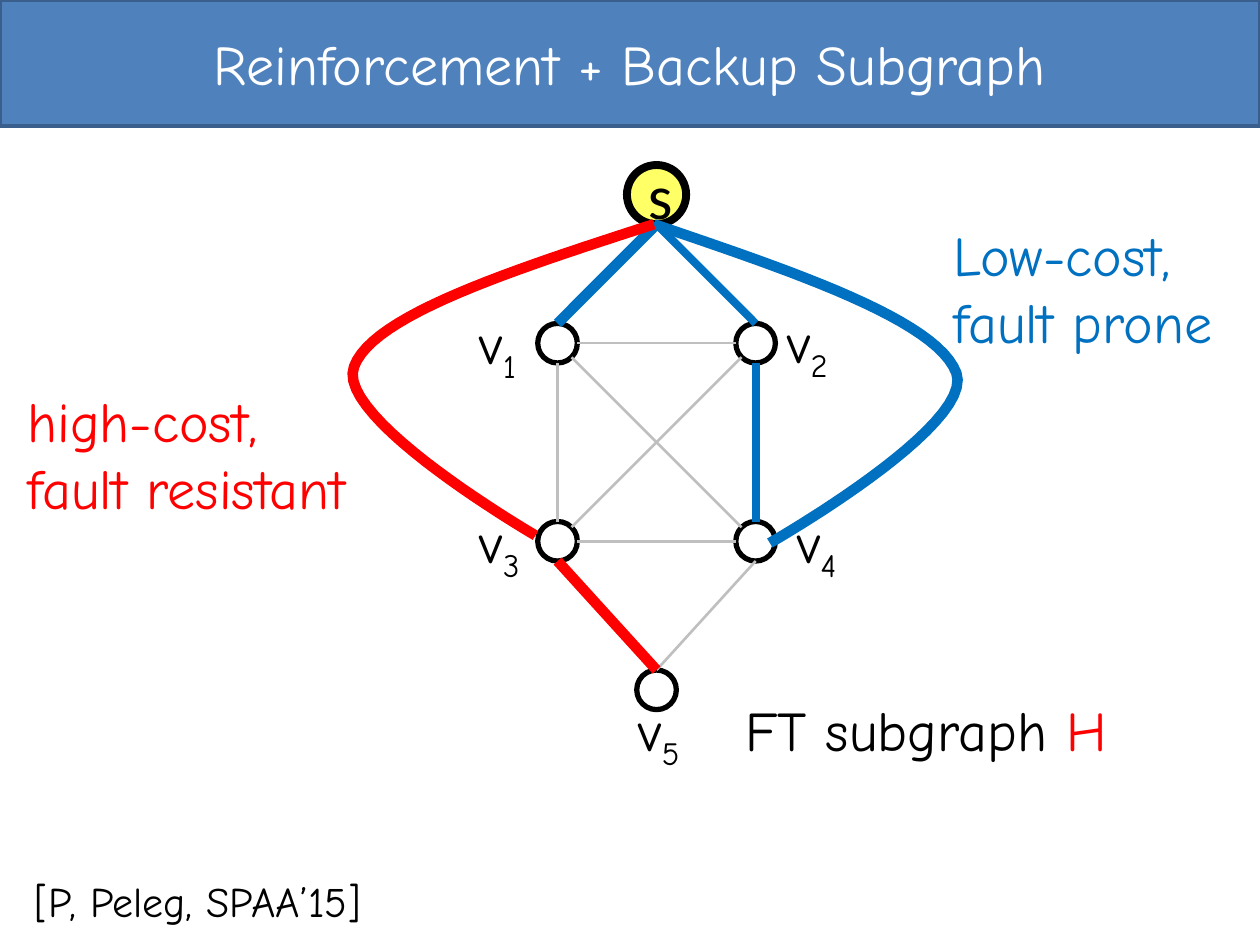
from dataclasses import dataclass

from lxml import etree
from pptx import Presentation
from pptx.dml.color import RGBColor
from pptx.enum.shapes import MSO_CONNECTOR, MSO_SHAPE
from pptx.enum.text import MSO_ANCHOR, MSO_AUTO_SIZE, PP_ALIGN
from pptx.oxml.ns import qn
from pptx.util import Inches, Pt

STRAIGHT = MSO_CONNECTOR.STRAIGHT
OVAL = MSO_SHAPE.OVAL
MIDDLE = MSO_ANCHOR.MIDDLE
CENTER, LEFT = PP_ALIGN.CENTER, PP_ALIGN.LEFT
GROW = MSO_AUTO_SIZE.SHAPE_TO_FIT_TEXT

COLORS = {
    "banner": "4F81BD", "banner_edge": "3A5F8C", "white": "FFFFFF",
    "black": "000000", "source": "FFFF66", "unused": "BFBFBF",
    "backup": "0070C0", "reinforced": "FF0000",
}
FONT = "Comic Neue"

# The slide is a grid of 100 columns by 75 rows; all lengths are in its cells.
COLUMNS, ROWS = 100, 75
CELL = Inches(0.1)
# The graph's nodes stand on a coarser grid.
GRAPH_LEFT, GRAPH_TOP, STEP = 44.25, 15.45, 7.86
DIAGONAL = 0.71
CURVE_STEPS = 24


@dataclass(frozen=True)
class Node:
    column: float
    row: float
    size: float = 3.14
    fill: str = "white"
    weight: float = 3

    @property
    def center(self) -> tuple[float, float]:
        return GRAPH_LEFT + self.column * STEP, GRAPH_TOP + self.row * STEP

    def rim(self, across: float, down: float) -> tuple[float, float]:
        """Point on the outline, (0, -1) being the top and (1, 0) the right."""
        x, y = self.center
        return x + across * self.size / 2, y + down * self.size / 2


@dataclass(frozen=True)
class Edge:
    start: str
    end: str
    leave: tuple[float, float]
    color: str = "unused"
    weight: float = 1.5


@dataclass(frozen=True)
class Span:
    text: str
    color: str = "black"
    subscript: bool = False


@dataclass(frozen=True)
class Label:
    left: float
    top: float
    width: float
    height: float
    lines: list[list[Span]]
    size: float = 32
    align: PP_ALIGN = LEFT


TOP, BOTTOM, SIDE_LEFT = (0, -1), (0, 1), (-1, 0)
UP_LEFT, DOWN_LEFT = (-DIAGONAL, -DIAGONAL), (-DIAGONAL, DIAGONAL)

NODES = {
    "v1": Node(0, 1.5), "v2": Node(2, 1.5),
    "v3": Node(0, 3.5), "v4": Node(2, 3.5), "v5": Node(1, 5),
    "s": Node(1, 0, 4.7, "source", 4.5),
}
# Each edge reaches its end node on the side opposite to the one it leaves by.
UNUSED_EDGES = [
    Edge("v2", "v1", SIDE_LEFT), Edge("v4", "v1", UP_LEFT),
    Edge("v1", "v3", BOTTOM), Edge("v4", "v3", SIDE_LEFT),
    Edge("v2", "v3", DOWN_LEFT), Edge("v4", "v5", BOTTOM),
]
CHOSEN_EDGES = [
    Edge("s", "v1", BOTTOM, "backup", 6), Edge("s", "v2", BOTTOM, "backup", 4.5),
    Edge("v3", "v5", BOTTOM, "reinforced", 6), Edge("v2", "v4", BOTTOM, "backup", 4.5),
]
# Bezier control points: start, then three points for each segment.
CURVES = {
    "backup": [(51.9, 17.8), (63.1, 21.6), (74.3, 25.4), (75.9, 29.6),
               (77.4, 33.8), (61.1, 43.1), (61.1, 43.1)],
    "reinforced": [(51.9, 17.8), (40.8, 21.4), (29.6, 25), (28.1, 29.1),
                   (26.5, 33.2), (42.5, 42.5), (42.5, 42.5)],
}
NODE_LABELS = {"1": (37.1, 24), "2": (61.5, 23.9), "3": (37.1, 39.8),
               "4": (62.3, 39.8), "5": (49.7, 54.7)}
LABELS = [
    Label(left, top, 6, 6.4, [[Span("v"), Span(number, subscript=True)]])
    for number, (left, top) in NODE_LABELS.items()
] + [
    Label(58.2, 54.7, 33, 6.4, [[Span("FT subgraph "), Span("H", "reinforced")]]),
    Label(74.7, 17, 25.3, 11.8,
          [[Span("Low-cost,", "backup")], [Span("fault prone", "backup")]]),
    Label(1.2, 30.2, 32.9, 11.8,
          [[Span("high-cost,", "reinforced")], [Span("fault resistant", "reinforced")]]),
    Label(-0.4, 69, 32.2, 5, [[Span("[P, Peleg, SPAA’15]")]], 24, CENTER),
]


def cells(*values: float) -> list[int]:
    return [round(value * CELL) for value in values]


def rgb(name: str) -> RGBColor:
    return RGBColor.from_string(COLORS[name])


def set_line(shape, color: str, weight: float) -> None:
    shape.line.color.rgb = rgb(color)
    shape.line.width = Pt(weight)


def set_fill(shape, color: str) -> None:
    shape.fill.solid()
    shape.fill.fore_color.rgb = rgb(color)


def set_font(span, size: float, color: str, name: str = FONT) -> None:
    span.font.name = name
    span.font.size = Pt(size)
    span.font.color.rgb = rgb(color)


def write_centered(shape, text: str, size: float, color: str, name: str = FONT) -> None:
    frame = shape.text_frame
    frame.text = text
    frame.vertical_anchor = MIDDLE
    frame.paragraphs[0].alignment = CENTER
    set_font(frame.paragraphs[0].runs[0], size, color, name)


def add_banner(page) -> None:
    title = page.shapes.title
    title.left, title.top, title.width, title.height = cells(0, 0, COLUMNS, 10)
    set_fill(title, "banner")
    set_line(title, "banner_edge", 2)
    write_centered(title, "Reinforcement + Backup Subgraph", 32, "white")


def add_node(page, node: Node):
    left, top = node.rim(-1, -1)
    circle = page.shapes.add_shape(OVAL, *cells(left, top, node.size, node.size))
    circle.shadow.inherit = False
    set_fill(circle, node.fill)
    set_line(circle, "black", node.weight)
    return circle


def add_edge(page, edge: Edge, circles: dict) -> None:
    across, down = edge.leave
    start = NODES[edge.start].rim(across, down)
    end = NODES[edge.end].rim(-across, -down)
    line = page.shapes.add_connector(STRAIGHT, *cells(*start, *end))
    if edge.leave == BOTTOM:
        line.end_connect(circles[edge.end], 0)
    set_line(line, edge.color, edge.weight)
    etree.SubElement(line._element.spPr, qn("a:effectLst"))


def bezier(points: list[tuple[float, float]]) -> list[tuple[float, float]]:
    """Points along a chain of cubic segments."""
    track = [points[0]]
    for first in range(0, len(points) - 1, 3):
        segment = points[first:first + 4]
        for step in range(1, CURVE_STEPS + 1):
            t = step / CURVE_STEPS
            shares = ((1 - t) ** 3, 3 * t * (1 - t) ** 2, 3 * t ** 2 * (1 - t), t ** 3)
            track.append(tuple(sum(share * point[axis] for share, point in zip(shares, segment))
                               for axis in (0, 1)))
    return track


def add_curve(page, color: str, points: list[tuple[float, float]]) -> None:
    track = [cells(*point) for point in bezier(points)]
    builder = page.shapes.build_freeform(*track[0])
    builder.add_line_segments(track[1:], close=False)
    curve = builder.convert_to_shape()
    curve.shadow.inherit = False
    curve.fill.background()
    set_line(curve, color, 6)


def add_label(page, label: Label) -> None:
    box = page.shapes.add_textbox(*cells(label.left, label.top, label.width, label.height))
    frame = box.text_frame
    frame.word_wrap = False
    frame.auto_size = GROW
    for index, line in enumerate(label.lines):
        para = frame.add_paragraph() if index else frame.paragraphs[0]
        para.alignment = label.align
        for part in line:
            span = para.add_run()
            span.text = part.text
            set_font(span, label.size, part.color)
            if part.subscript:
                span._r.get_or_add_rPr().set("baseline", "-25000")


def main() -> None:
    deck = Presentation()
    deck.slide_width, deck.slide_height = cells(COLUMNS, ROWS)
    page = deck.slides.add_slide(deck.slide_layouts[5])
    add_banner(page)
    circles = {name: add_node(page, node) for name, node in NODES.items()}
    write_centered(circles["s"], "s", 36, "black", "Calibri")
    for edge in UNUSED_EDGES + CHOSEN_EDGES:
        add_edge(page, edge, circles)
    for color, points in CURVES.items():
        add_curve(page, color, points)
    for label in LABELS:
        add_label(page, label)
    deck.save("out.pptx")


if __name__ == "__main__":
    main()
